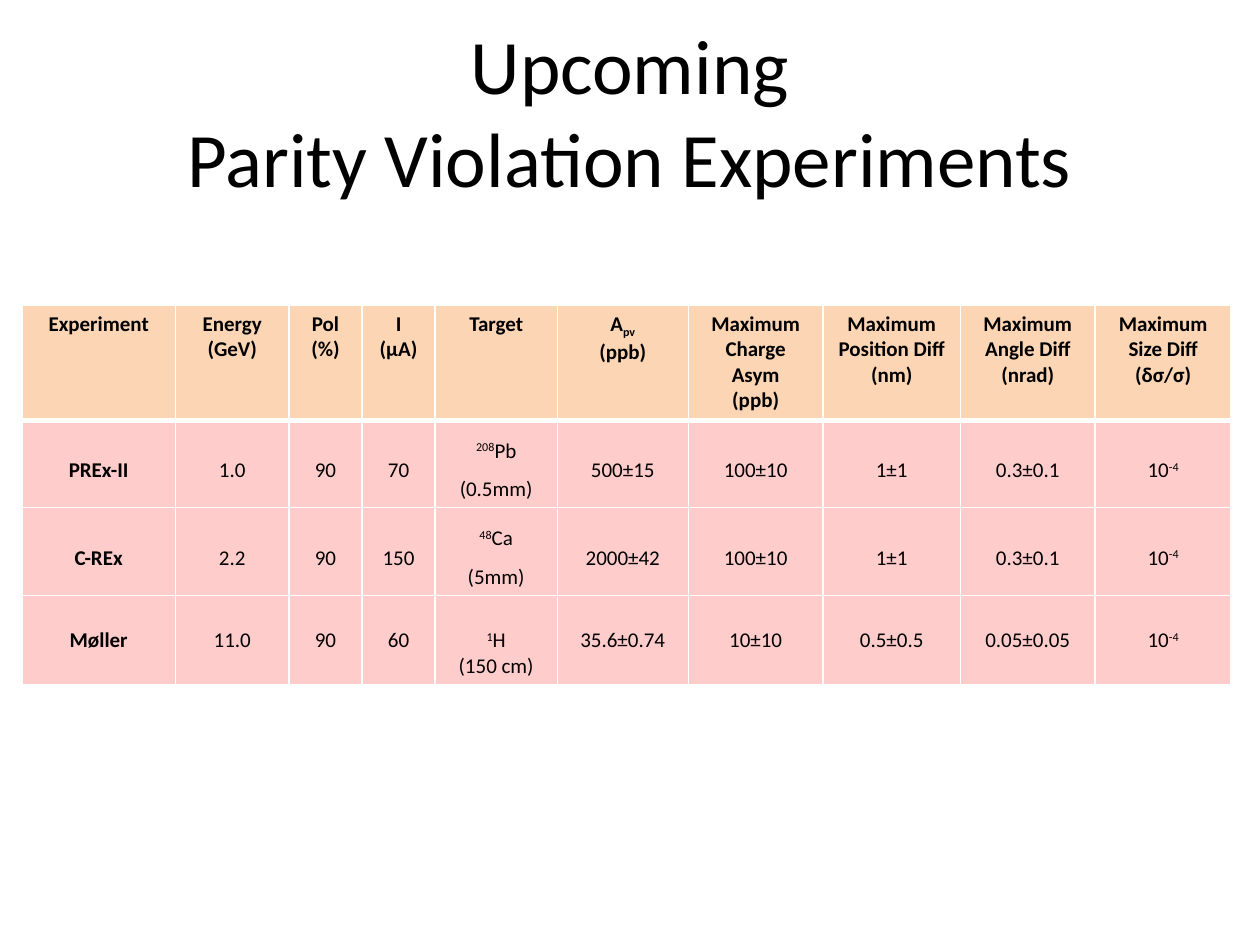
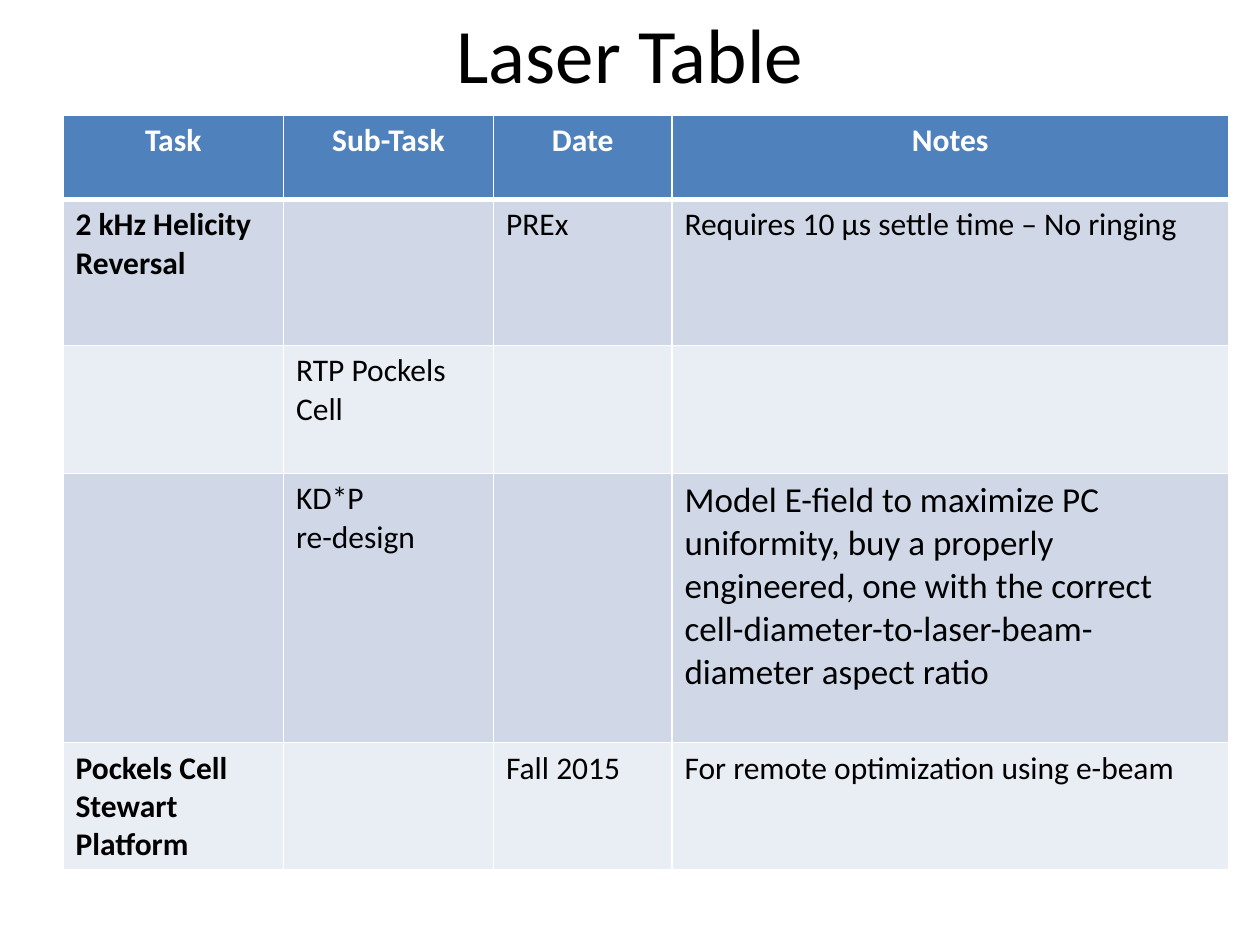
import pptx
import pptx.util
import pptx.dml.color
import pptx.enum.text
import lxml.etree
from dataclasses import dataclass

Pt = pptx.util.Pt
RGBColor = pptx.dml.color.RGBColor
Align = pptx.enum.text.PP_ALIGN
Anchor = pptx.enum.text.MSO_ANCHOR

BLACK = RGBColor(0x00, 0x00, 0x00)
WHITE = RGBColor(0xFF, 0xFF, 0xFF)
PEACH = RGBColor(0xFC, 0xD5, 0xB5)
PINK = RGBColor(0xFF, 0xCC, 0xCC)
BLUE = RGBColor(0x4F, 0x81, 0xBD)
BLUE_BAND = RGBColor(0xD0, 0xD8, 0xE8)
PALE_BAND = RGBColor(0xE9, 0xED, 0xF4)


@dataclass
class RowStyle:
    fill: RGBColor
    size: float
    color: RGBColor = BLACK
    align: Align = Align.LEFT
    anchor: Anchor = Anchor.TOP
    all_bold: bool = False
    spacing: float = 1.0
    script: int = 30
    side: float = 7.2
    top: float = 3.6
    bottom: float = 3.6


class Deck:
    font = "Calibri"
    title_size = 44
    rule = 1
    header_rule = 3

    def __init__(self):
        self.file = pptx.Presentation()
        self.file.slide_width = Pt(720)
        self.file.slide_height = Pt(540)
        self.page = None

    def add_page(self):
        self.page = self.file.slides.add_slide(self.file.slide_layouts[6])

    def add_text(self, frame, text, size, color=BLACK, bold=False,
                 align=Align.CENTER, spacing=1.0, script=0):
        """Lines become paragraphs; text between bars is raised or lowered."""
        for number, line in enumerate(text.split("\n")):
            para = frame.add_paragraph() if number else frame.paragraphs[0]
            para.alignment = align
            para.line_spacing = spacing
            for index, piece in enumerate(line.split("|")):
                if not piece:
                    continue
                span = para.add_run()
                span.text = piece
                span.font.name = self.font
                span.font.size = Pt(size)
                span.font.bold = bold
                span.font.color.rgb = color
                if index % 2:
                    span._r.get_or_add_rPr().set("baseline", str(script * 1000))

    def title(self, text, height):
        box = self.page.shapes.add_textbox(Pt(36), Pt(0), Pt(648), Pt(height))
        frame = box.text_frame
        frame.word_wrap = True
        frame.vertical_anchor = Anchor.MIDDLE
        self.add_text(frame, text, self.title_size)

    def border(self, cell, edge, width):
        properties = cell._tc.get_or_add_tcPr()
        namespace = "{" + properties.nsmap["a"] + "}"
        line = lxml.etree.SubElement(properties, namespace + "ln" + edge, w=str(Pt(width)))
        fill = lxml.etree.SubElement(line, namespace + "solidFill")
        lxml.etree.SubElement(fill, namespace + "srgbClr", val=str(WHITE))

    def cell(self, cell, text, style, bold, size):
        cell.margin_left = cell.margin_right = Pt(style.side)
        cell.margin_top = Pt(style.top)
        cell.margin_bottom = Pt(style.bottom)
        cell.vertical_anchor = style.anchor
        cell.fill.solid()
        cell.fill.fore_color.rgb = style.fill
        self.add_text(cell.text_frame, text, size, style.color, bold,
                      style.align, style.spacing, style.script)

    def table(self, left, top, widths, heights, rows, styles, special_sizes=None):
        frame = self.page.shapes.add_table(
            len(rows), len(widths), Pt(left), Pt(top), Pt(sum(widths)), Pt(sum(heights)))
        table = frame.table
        table.horz_banding = False
        for column, width in zip(table.columns, widths):
            column.width = Pt(width)
        for row, height in zip(table.rows, heights):
            row.height = Pt(height)
        for r, (texts, style) in enumerate(zip(rows, styles)):
            for c, text in enumerate(texts):
                cell = table.cell(r, c)
                for edge in "LRTB":
                    below_header = (r, edge) in ((0, "B"), (1, "T"))
                    self.border(cell, edge, self.header_rule if below_header else self.rule)
                size = (special_sizes or {}).get((r, c), style.size)
                self.cell(cell, text, style, style.all_bold or c == 0, size)


def experiments_page(deck):
    deck.add_page()
    header = RowStyle(PEACH, 12, align=Align.CENTER, all_bold=True, script=-25)
    spaced = RowStyle(PINK, 12, align=Align.CENTER, anchor=Anchor.MIDDLE,
                      spacing=1.5, side=5.76, top=2.88, bottom=2.88)
    lowered = RowStyle(PINK, 12, align=Align.CENTER, top=18.25)
    rows = [
        ["Experiment", "Energy\n(GeV)", "Pol\n(%)", "I\n(µA)", "Target", "A|pv|\n(ppb)",
         "Maximum Charge Asym\n(ppb)", "Maximum\nPosition Diff\n(nm)",
         "Maximum\nAngle Diff\n(nrad)", "Maximum\nSize Diff\n(δσ/σ)"],
        ["PREx-II", "1.0", "90", "70", "|208|Pb (0.5mm)", "500±15",
         "100±10", "1±1", "0.3±0.1", "10|-4|"],
        ["C-REx", "2.2", "90", "150", "|48|Ca\n(5mm)", "2000±42",
         "100±10", "1±1", "0.3±0.1", "10|-4|"],
        ["Møller", "11.0", "90", "60", "|1|H\n(150 cm)", "35.6±0.74",
         "10±10", "0.5±0.5", "0.05±0.05", "10|-4|"],
    ]
    widths = [87.84, 64.8, 41.76, 41.76, 69.84, 74.88, 77.04, 78.48, 77.04, 77.76]
    deck.table(12.5, 174.24, widths, [66, 49.5, 50.5, 51], rows,
               [header, spaced, spaced, lowered])
    deck.title("Upcoming\nParity Violation Experiments", 126)


def laser_page(deck):
    deck.add_page()
    deck.title("Laser Table", 60)
    header = RowStyle(BLUE, 18, WHITE, Align.CENTER, all_bold=True)
    dark = RowStyle(BLUE_BAND, 18)
    light = RowStyle(PALE_BAND, 18)
    rows = [
        ["Task", "Sub-Task", "Date", "Notes"],
        ["2 kHz Helicity Reversal", "", "PREx", "Requires 10 µs settle time – No ringing"],
        ["", "RTP Pockels Cell", "", ""],
        ["", "KD*P\nre-design", "",
         "Model E-field to maximize PC uniformity, buy a properly engineered, one with "
         "the correct cell-diameter-to-laser-beam-diameter aspect ratio"],
        ["Pockels Cell Stewart Platform", "", "Fall 2015",
         "For remote optimization using e-beam"],
    ]
    deck.table(36, 66, [126, 120, 102, 318], [48, 83.5, 73, 154, 72.5], rows,
               [header, dark, light, dark, light], {(3, 3): 20})


def main():
    deck = Deck()
    experiments_page(deck)
    laser_page(deck)
    deck.file.save("out.pptx")


if __name__ == "__main__":
    main()
